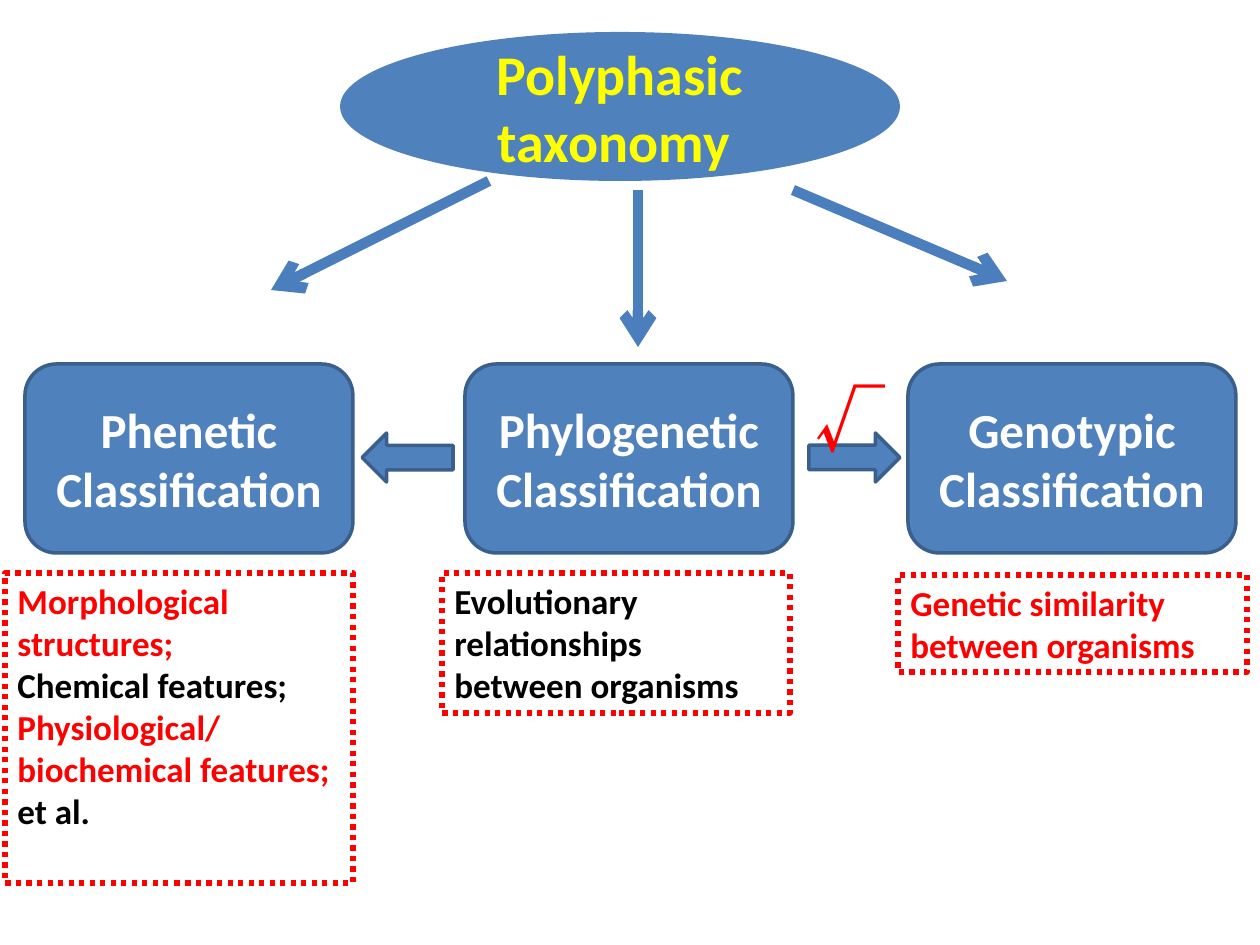
import pptx
import pptx.util
import pptx.dml.color
import pptx.enum.dml
import pptx.enum.shapes
import pptx.enum.text
import pptx.oxml.ns
from lxml import etree

RGBColor = pptx.dml.color.RGBColor
MSO_SHAPE = pptx.enum.shapes.MSO_SHAPE
ANCHOR = pptx.enum.text.MSO_ANCHOR
ALIGN = pptx.enum.text.PP_ALIGN
qn = pptx.oxml.ns.qn

BLUE = RGBColor(0x4F, 0x81, 0xBD)
ARROW_BLUE = RGBColor(0x4B, 0x7E, 0xBC)
EDGE_BLUE = RGBColor(0x3A, 0x5F, 0x8C)
YELLOW = RGBColor(0xFF, 0xFF, 0x00)
RED = RGBColor(0xFF, 0x00, 0x00)
BLACK = RGBColor(0x00, 0x00, 0x00)
WHITE = RGBColor(0xFF, 0xFF, 0xFF)

FONT = "Calibri"
SYMBOL_FONT = "Noto Sans CJK SC"


def px(n):
    """Convert pixels (126 to the inch) to EMU."""
    return pptx.util.Emu(round(n * 914400 / 126))


def add_text(sp, lines, size, align, anchor, font=FONT):
    """Write (text, colour) lines as paragraphs of one run each."""
    tf = sp.text_frame
    tf.word_wrap = True
    tf.vertical_anchor = anchor
    for i, (text, color) in enumerate(lines):
        p = tf.paragraphs[0] if i == 0 else tf.add_paragraph()
        p.alignment = align
        r = p.add_run()
        r.text = text
        r.font.name = font
        r.font.size = pptx.util.Pt(size)
        r.font.bold = True
        r.font.color.rgb = color
    return tf


def add_block(s, kind, box, edge=EDGE_BLUE):
    """Add a blue preset shape, outlined unless edge is None."""
    sp = s.shapes.add_shape(kind, *map(px, box))
    sp.shadow.inherit = False
    sp.fill.solid()
    sp.fill.fore_color.rgb = BLUE
    if edge is None:
        sp.line.fill.background()
    else:
        sp.line.color.rgb = edge
        sp.line.width = pptx.util.Pt(2)
    return sp


def add_arrow(s, start, end):
    """Add a thick line with an open arrowhead at its end."""
    ln = s.shapes.add_connector(pptx.enum.shapes.MSO_CONNECTOR.STRAIGHT,
                                *map(px, start + end))
    ln.line.color.rgb = ARROW_BLUE
    ln.line.width = pptx.util.Pt(6)
    etree.SubElement(ln.line._get_or_add_ln(), qn("a:tailEnd"), type="arrow")
    etree.SubElement(ln._element.spPr, qn("a:effectLst"))


def add_note(s, box, lines):
    """Add an unfilled box with a dotted red outline."""
    sp = s.shapes.add_shape(MSO_SHAPE.RECTANGLE, *map(px, box))
    sp.shadow.inherit = False
    sp.fill.background()
    sp.line.color.rgb = RED
    sp.line.width = pptx.util.Pt(3)
    sp.line.dash_style = pptx.enum.dml.MSO_LINE.ROUND_DOT
    add_text(sp, lines, 20, ALIGN.LEFT, ANCHOR.TOP)


def add_check(s, box):
    """Add the red root sign used as a tick."""
    sp = s.shapes.add_textbox(*map(px, box))
    tf = add_text(sp, [("√", RED)], 40, ALIGN.LEFT, ANCHOR.TOP, SYMBOL_FONT)
    rPr = tf.paragraphs[0].runs[0].font._element
    etree.SubElement(rPr, qn("a:ea"), typeface=SYMBOL_FONT)


def main():
    prs = pptx.Presentation()
    prs.slide_width, prs.slide_height = px(1260), px(945)
    s = prs.slides.add_slide(prs.slide_layouts[6])

    # Main topic
    title = add_block(s, MSO_SHAPE.OVAL, (340, 32, 560, 149), edge=None)
    add_text(title, [("Polyphasic taxonomy ", YELLOW)], 32,
             ALIGN.CENTER, ANCHOR.MIDDLE)

    # Arrows from the topic to its branches
    for start, end in (((489, 181), (271, 290)),
                       ((638, 190), (638, 347)),
                       ((793, 190), (1007, 281))):
        add_arrow(s, start, end)

    # Branches
    for left, lines in ((25, ["Phenetic Classification"]),
                        (465, ["Phylogenetic", "Classification"]),
                        (908, ["Genotypic", "Classification"])):
        sp = add_block(s, MSO_SHAPE.ROUNDED_RECTANGLE, (left, 364, 328, 189))
        add_text(sp, [(text, WHITE) for text in lines], 28,
                 ALIGN.CENTER, ANCHOR.MIDDLE)

    # Notes under the branches
    add_note(s, (5, 573, 348, 310), [
        ("Morphological structures;", RED),
        ("Chemical features;", BLACK),
        ("Physiological/", RED),
        ("biochemical features;", RED),
        ("et al.", BLACK)])
    add_note(s, (442, 573, 348, 140),
             [("Evolutionary relationships between organisms", BLACK)])
    add_note(s, (898, 575, 349, 97),
             [("Genetic similarity between organisms", RED)])

    # Block arrows between the branches, and the tick
    for left, rotation in ((809, 0), (362, 180)):
        sp = add_block(s, MSO_SHAPE.RIGHT_ARROW, (left, 433, 91, 49))
        sp.rotation = rotation
    add_check(s, (803, 370, 102, 97))

    prs.save("out.pptx")


if __name__ == "__main__":
    main()
